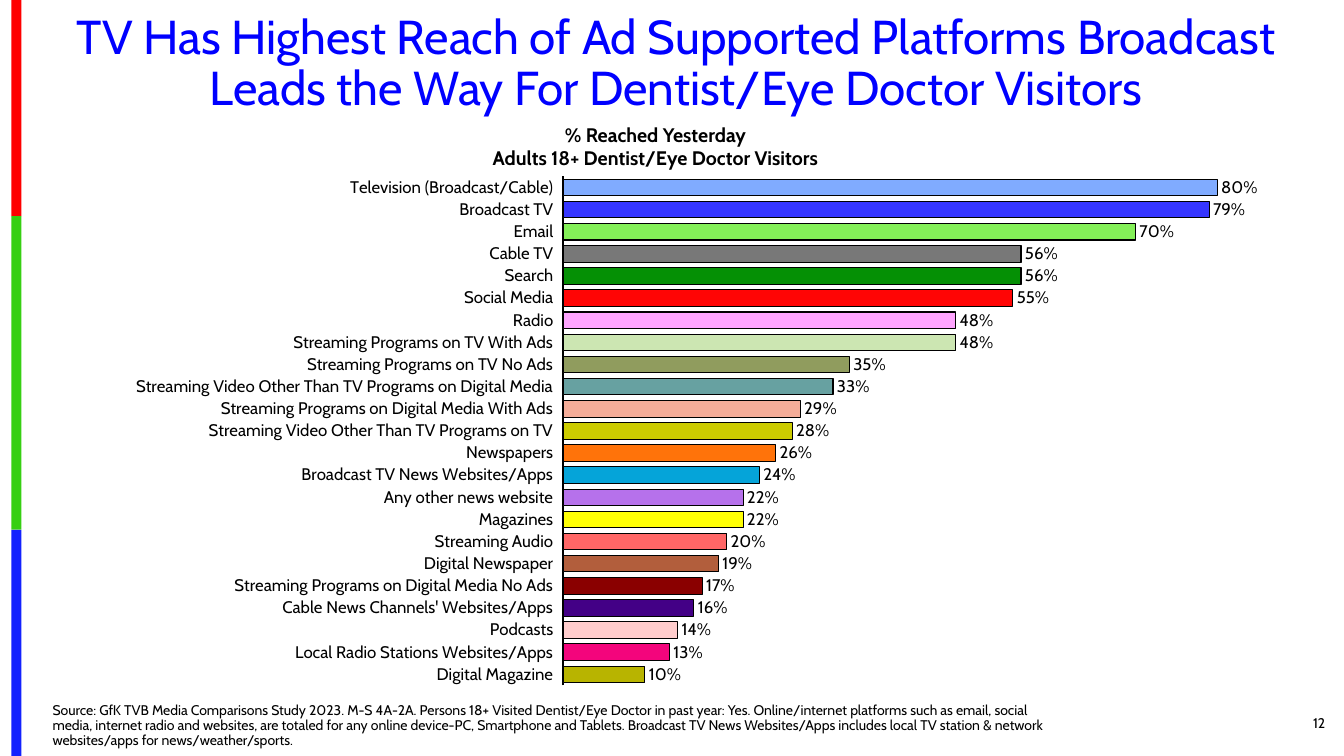
from pptx import Presentation
from pptx.chart.data import CategoryChartData
from pptx.dml.color import RGBColor
from pptx.enum.chart import XL_CHART_TYPE as Kind, XL_LABEL_POSITION as Spot
from pptx.enum.chart import XL_TICK_LABEL_POSITION as Tags, XL_TICK_MARK as Tick
from pptx.enum.shapes import MSO_SHAPE as Form
from pptx.enum.text import MSO_ANCHOR as Anchor, MSO_AUTO_SIZE as Fit, PP_ALIGN as Align
from pptx.oxml import parse_xml
from pptx.oxml.ns import nsdecls, qn
from pptx.util import Cm, Pt

FACE = "Cabin"
BLACK = "000000"
TITLE = ("TV Has Highest Reach of Ad Supported Platforms Broadcast "
         "Leads the Way For Dentist/Eye Doctor Visitors")
HEADS = ["% Reached Yesterday", "Adults 18+ Dentist/Eye Doctor Visitors"]
SOURCE = ("Source: GfK TVB Media Comparisons Study 2023. M-S 4A-2A. "
          "Persons 18+ Visited Dentist/Eye Doctor in past year: Yes. "
          "Online/internet platforms such as email, social media, internet radio "
          "and websites, are totaled for any online device-PC, Smartphone and "
          "Tablets. Broadcast TV News Websites/Apps includes local TV station & "
          "network websites/apps for news/weather/sports.")
STRIPES = [("FE0000", 5.45), ("36CF12", 7.9), ("1322FE", 5.7)]
REACH = [
    ("Television (Broadcast/Cable)", 0.80, "80ABFF"),
    ("Broadcast TV", 0.79, "3636FF"),
    ("Email", 0.70, "84F058"),
    ("Cable TV", 0.56, "787878"),
    ("Search", 0.56, "059005"),
    ("Social Media", 0.55, "FF0505"),
    ("Radio", 0.48, "FFA4FF"),
    ("Streaming Programs on TV With Ads", 0.48, "CCE6B2"),
    ("Streaming Programs on TV No Ads", 0.35, "909C5E"),
    ("Streaming Video Other Than TV Programs on Digital Media", 0.33, "67A1A1"),
    ("Streaming Programs on Digital Media With Ads", 0.29, "F5AD99"),
    ("Streaming Video Other Than TV Programs on TV", 0.28, "CCCC00"),
    ("Newspapers", 0.26, "FF730A"),
    ("Broadcast TV News Websites/Apps", 0.24, "05A4D9"),
    ("Any other news website", 0.22, "B671EB"),
    ("Magazines", 0.22, "FFFF05"),
    ("Streaming Audio", 0.20, "FF6666"),
    ("Digital Newspaper", 0.19, "B25E3C"),
    ("Streaming Programs on Digital Media No Ads", 0.17, "8A0000"),
    ("Cable News Channels' Websites/Apps", 0.16, "430086"),
    ("Podcasts", 0.14, "FFCCCC"),
    ("Local Radio Stations Websites/Apps", 0.13, "F3057C"),
    ("Digital Magazine", 0.10, "B8B400"),
]


def hue(code):
    return RGBColor.from_string(code)


def style(font, size, code=BLACK, bold=False):
    font.name, font.size, font.bold = FACE, Pt(size), bold
    font.color.rgb = hue(code)


def write(para, text, size, code=BLACK, bold=False, align=Align.LEFT):
    para.alignment = align
    run = para.add_run()
    run.text = text
    style(run.font, size, code, bold)


def place(shape, box, anchor):
    """Move a text shape to a box in centimetres and return its wrapped frame."""
    shape.left, shape.top, shape.width, shape.height = map(Cm, box)
    frame = shape.text_frame
    frame.word_wrap, frame.auto_size = True, Fit.NONE
    frame.vertical_anchor = anchor
    return frame


def add_box(slide, box, anchor):
    return place(slide.shapes.add_textbox(0, 0, 0, 0), box, anchor)


def add_stripes(slide, box):
    left, top, width = box
    for code, height in STRIPES:
        bar = slide.shapes.add_shape(Form.RECTANGLE, Cm(left), Cm(top),
                                     Cm(width), Cm(height))
        bar.shadow.inherit = False
        bar.fill.solid()
        bar.fill.fore_color.rgb = hue(code)
        bar.line.fill.background()
        top += height


def add_title(slide, box):
    para = place(slide.shapes.title, box, Anchor.MIDDLE).paragraphs[0]
    para.line_spacing = 0.9
    write(para, TITLE, 34, "0000FF", align=Align.CENTER)


def fix_plot(chart, **sides):
    """Pin the inner plot area, with sides as shares of the chart."""
    area = chart.element.find(".//" + qn("c:plotArea"))
    for old in area.findall(qn("c:layout")):
        area.remove(old)
    parts = "".join(f'<c:{name} val="{val}"/>' for name, val in sides.items())
    area.insert(0, parse_xml(
        f'<c:layout {nsdecls("c")}><c:manualLayout><c:layoutTarget val="inner"/>'
        f'<c:xMode val="edge"/><c:yMode val="edge"/>{parts}'
        '</c:manualLayout></c:layout>'))


def add_bars(slide, box):
    data = CategoryChartData(number_format="0%")
    names, vals, codes = zip(*REACH)
    data.categories = names
    data.add_series("Series 1", vals)
    chart = slide.shapes.add_chart(Kind.BAR_CLUSTERED, *map(Cm, box), data).chart
    chart.has_title = chart.has_legend = False
    style(chart.font, 10)
    fix_plot(chart, x=0.413, y=0.047, w=0.565, h=0.946)

    cats = chart.category_axis
    cats.reverse_order = True
    cats.has_major_gridlines = False
    cats.major_tick_mark = cats.minor_tick_mark = Tick.NONE
    cats.tick_label_position = Tags.LOW
    cats.format.line.color.rgb = hue(BLACK)
    cats.format.line.width = Pt(1.5)
    style(cats.tick_labels.font, 12)

    scale = chart.value_axis
    scale.minimum_scale, scale.maximum_scale = 0, 0.9
    scale.has_major_gridlines = scale.visible = False

    plot = chart.plots[0]
    plot.gap_width, plot.vary_by_categories = 34, False
    plot.has_data_labels = True
    tags = plot.data_labels
    tags.show_value, tags.position = True, Spot.OUTSIDE_END
    tags.number_format, tags.number_format_is_linked = "0%", False
    style(tags.font, 12)
    for i, code in enumerate(codes):
        look = plot.series[0].points[i].format
        look.fill.solid()
        look.fill.fore_color.rgb = hue(code)
        look.line.color.rgb = hue(BLACK)
        look.line.width = Pt(0.75)


def add_heads(slide, box):
    frame = add_box(slide, box, Anchor.TOP)
    for i, text in enumerate(HEADS):
        para = frame.add_paragraph() if i else frame.paragraphs[0]
        write(para, text, 14, bold=True, align=Align.CENTER)


def add_foot(slide, box):
    """Set the source note at the left of the box and the page number at the right."""
    left, top, width, height = box
    note = place(slide.placeholders[1], (left, top, 25.83, height), Anchor.BOTTOM)
    para = note.paragraphs[0]
    props = para._p.get_or_add_pPr()
    props.set("marL", "0")
    props.set("indent", "0")
    props.append(parse_xml(f'<a:buNone {nsdecls("a")}/>'))
    para.line_spacing, para.space_before = 0.9, Pt(0)
    write(para, SOURCE, 10)
    wide = 2.74
    page = add_box(slide, (left + width - wide, top, wide, height - 0.15),
                   Anchor.MIDDLE)
    write(page.paragraphs[0], "12", 10, align=Align.RIGHT)


def main():
    deck = Presentation()
    deck.slide_width, deck.slide_height = Cm(33.87), Cm(19.05)
    slide = deck.slides.add_slide(deck.slide_layouts[1])
    add_stripes(slide, (0.29, 0, 0.25))
    add_title(slide, (1.27, 0.2, 31.55, 2.87))
    add_bars(slide, (0.64, 3.81, 32.82, 13.56))
    add_heads(slide, (8.05, 2.97, 16.94, 1.45))
    add_foot(slide, (1.07, 17.58, 32.58, 1.42))
    deck.save("out.pptx")


if __name__ == "__main__":
    main()
